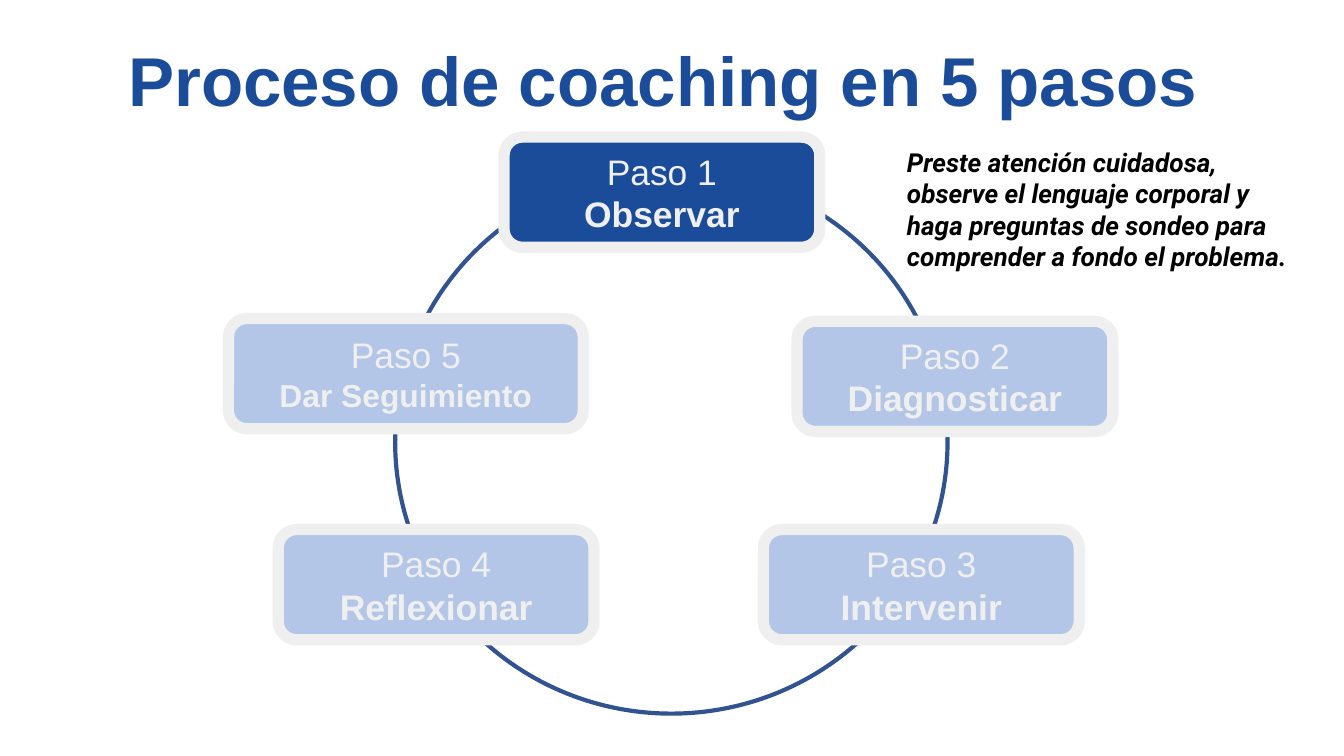
from pptx import Presentation
from pptx.dml.color import RGBColor
from pptx.enum.shapes import MSO_SHAPE as Preset
from pptx.enum.text import MSO_ANCHOR as Anchor, PP_ALIGN as Align
from pptx.util import Pt

COLORS = {
    "active": "1A4C99",
    "inactive": "B3C6E7",
    "border": "EFEFEF",
    "ring": "31538F",
    "advice": "000000",
}
STEP_WIDTH, STEP_HEIGHT = 169.2, 59.04
STEPS = [
    ("Observar", 270, 73.44, {"fill": "active"}),
    ("Diagnosticar", 426.96, 172.08, {}),
    ("Intervenir", 408.96, 283.68, {}),
    ("Reflexionar", 149.04, 283.68, {}),
    ("Dar Seguimiento", 122.4, 170.64, {"width": 190.08, "name_size": 17}),
]


def color(name):
    return RGBColor.from_string(COLORS[name])


def write(paragraph, text, size, ink, font="Arial", bold=False, italic=False,
          align=Align.LEFT, spacing=1.0):
    paragraph.alignment = align
    paragraph.line_spacing = spacing
    run = paragraph.add_run()
    run.text = text
    run.font.name = font
    run.font.size = Pt(size)
    run.font.bold = bold
    run.font.italic = italic
    run.font.color.rgb = color(ink)


def set_frame(frame, side, vertical, anchor=Anchor.TOP):
    frame.word_wrap = True
    frame.vertical_anchor = anchor
    frame.margin_left = frame.margin_right = Pt(side)
    frame.margin_top = frame.margin_bottom = Pt(vertical)


def add_outlined(slide, preset, box, line, weight, fill=None):
    outlined = slide.shapes.add_shape(preset, *map(Pt, box))
    outlined.shadow.inherit = False
    outlined.line.color.rgb = color(line)
    outlined.line.width = Pt(weight)
    if fill:
        outlined.fill.solid()
        outlined.fill.fore_color.rgb = color(fill)
    else:
        outlined.fill.background()
    return outlined


def add_step(slide, number, name, left, top, fill="inactive",
             width=STEP_WIDTH, name_size=19):
    step = add_outlined(slide, Preset.ROUNDED_RECTANGLE,
                        (left, top, width, STEP_HEIGHT), "border", 6, fill)
    step.adjustments[0] = 0.167
    frame = step.text_frame
    set_frame(frame, 7.2, 7.2, Anchor.MIDDLE)
    write(frame.paragraphs[0], f"Paso {number}", 19, "border", align=Align.CENTER)
    write(frame.add_paragraph(), name, name_size, "border", bold=True,
          align=Align.CENTER)


def add_text(slide, box, text, size, ink, vertical, **style):
    frame = slide.shapes.add_textbox(*map(Pt, box)).text_frame
    set_frame(frame, 7.2, vertical)
    write(frame.paragraphs[0], text, size, ink, **style)


def main():
    deck = Presentation()
    deck.slide_width, deck.slide_height = Pt(720), Pt(405)
    slide = deck.slides.add_slide(deck.slide_layouts[6])

    add_outlined(slide, Preset.OVAL, (211.68, 91.44, 295.92, 290.88), "ring", 2.25)
    for number, (name, left, top, options) in enumerate(STEPS, 1):
        add_step(slide, number, name, left, top, **options)
    add_text(slide, (45.36, 18, 630, 54.72), "Proceso de coaching en 5 pasos ",
             37, "active", 7.2, bold=True, align=Align.CENTER, spacing=0.9)
    add_text(slide, (478.8, 74.88, 221.04, 74.88),
             "Preste atención cuidadosa, observe el lenguaje corporal y haga "
             "preguntas de sondeo para comprender a fondo el problema.",
             14, "advice", 3.6, font="Roboto", bold=True, italic=True)

    deck.save("out.pptx")


if __name__ == "__main__":
    main()
